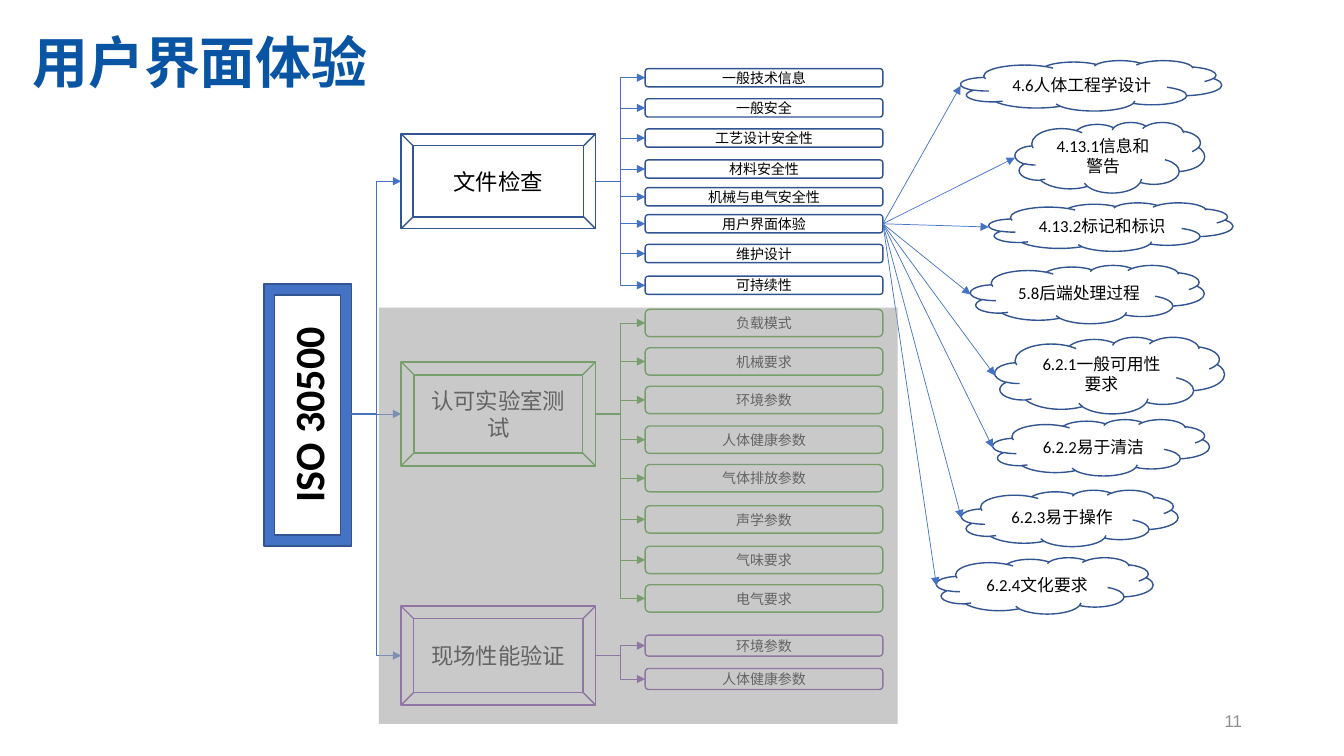
from dataclasses import dataclass

from lxml import etree
from pptx import Presentation
from pptx.dml.color import RGBColor
from pptx.enum.lang import MSO_LANGUAGE_ID as Language
from pptx.enum.shapes import MSO_CONNECTOR as Connector, MSO_SHAPE as Shape
from pptx.enum.text import MSO_ANCHOR as Anchor, MSO_AUTO_SIZE as AutoSize, PP_ALIGN as Align
from pptx.oxml.ns import qn
from pptx.util import Cm, Pt


@dataclass(frozen=True)
class Theme:
    title: str = "0A55A3"
    text: str = "000000"
    number: str = "8C8C8C"
    accent: str = "4472C4"
    blue: str = "325491"
    green: str = "36941C"
    purple: str = "7030A0"
    veil: str = "A5A5A5"
    title_size: int = 40
    root_size: int = 30
    group_size: int = 16
    note_size: int = 12
    leaf_size: int = 10
    outline: float = 1
    arrow: float = 0.5


theme = Theme()
deck = Presentation()
deck.slide_width, deck.slide_height = Cm(33.87), Cm(19.05)
page = deck.slides.add_slide(deck.slide_layouts[5])


def write(box, text, size, color=theme.text, align=Align.CENTER, name="Calibri", bold=False):
    frame = box.text_frame
    frame.text = text
    frame.word_wrap = True
    frame.vertical_anchor = Anchor.MIDDLE
    para = frame.paragraphs[0]
    para.alignment = align
    font = para.runs[0].font
    font.name, font.size, font.bold = name, Pt(size), bold
    font.color.rgb = RGBColor.from_string(color)
    font.language_id = Language.SIMPLIFIED_CHINESE


def arrow(kind, x1, y1, x2, y2, color=theme.accent):
    line = page.shapes.add_connector(kind, Cm(x1), Cm(y1), Cm(x2), Cm(y2))
    line.line.color.rgb = RGBColor.from_string(color)
    line.line.width = Pt(theme.arrow)
    etree.SubElement(line.line._get_or_add_ln(), qn("a:tailEnd"), type="triangle")
    etree.SubElement(line._element.spPr, qn("a:effectLst"))
    return line


# Title
title = page.shapes.title
title.left, title.top, title.width, title.height = Cm(0.81), Cm(0.38), Cm(31.09), Cm(2.51)
write(title, "用户界面体验", theme.title_size, theme.title, Align.LEFT, "Arial", True)
frame = title.text_frame
frame.auto_size = AutoSize.NONE
frame.margin_left = frame.margin_right = frame.margin_top = frame.margin_bottom = 0
frame.paragraphs[0].line_spacing = 0.9

# Root: the standard
root_right, root_middle = 8.85, 10.43
root = page.shapes.add_shape(Shape.FRAME, Cm(6.65), Cm(7.16), Cm(2.21), Cm(6.6))
root.shadow.inherit = False
root.fill.solid()
root.fill.fore_color.rgb = RGBColor.from_string(theme.accent)
root.line.color.rgb = RGBColor.from_string(theme.blue)
root.line.width = Pt(theme.outline)
write(root, "ISO 30500", theme.root_size, bold=True)
root.text_frame._txBody.bodyPr.set("vert", "vert270")

# Groups: label, middle, height, outline, arrow colour, leaf height, leaves with their middles
groups = [
    ("文件检查", 4.57, 2.39, theme.blue, theme.accent, 0.46, [
        ("一般技术信息", 1.96), ("一般安全", 2.72), ("工艺设计安全性", 3.48), ("材料安全性", 4.26),
        ("机械与电气安全性", 4.96), ("用户界面体验", 5.64), ("维护设计", 6.39), ("可持续性", 7.19)]),
    ("认可实验室测试", 10.43, 2.62, theme.green, theme.green, 0.69, [
        ("负载模式", 8.14), ("机械要求", 9.11), ("环境参数", 10.08), ("人体健康参数", 11.08),
        ("气体排放参数", 12.05), ("声学参数", 13.09), ("气味要求", 14.11), ("电气要求", 15.08)]),
    ("现场性能验证", 16.52, 2.49, theme.purple, theme.purple, 0.53, [
        ("环境参数", 16.27), ("人体健康参数", 17.11)]),
]
group_left, group_width = 10.11, 4.9
group_right = group_left + group_width
leaf_left, leaf_width = 16.26, 5.99

# Outlined shapes: preset, left, middle, width, height, outline, text, size
outlined = []
for label, middle, height, color, arrow_color, leaf_height, leaves in groups:
    outlined.append((Shape.BEVEL, group_left, middle, group_width, height,
                     color, label, theme.group_size))
    kind = Connector.STRAIGHT if middle == root_middle else Connector.ELBOW
    arrow(kind, root_right, root_middle, group_left, middle)
    for leaf, leaf_middle in leaves:
        outlined.append((Shape.ROUNDED_RECTANGLE, leaf_left, leaf_middle, leaf_width,
                         leaf_height, color, leaf, theme.leaf_size))
        arrow(Connector.ELBOW, group_right, middle, leaf_left, leaf_middle, arrow_color)

# Clauses: text, left, middle, width, height
clauses = [
    ("4.6人体工程学设计", 24.21, 2.16, 6.58, 1.27),
    ("4.13.1信息和警告", 25.58, 3.97, 4.78, 1.78),
    ("4.13.2标记和标识", 24.92, 5.72, 6.15, 1.22),
    ("5.8后端处理过程", 24.46, 7.42, 5.89, 1.47),
    ("6.2.1一般可用性要求", 25.07, 9.46, 5.79, 1.93),
    ("6.2.2易于清洁", 25.02, 11.28, 5.46, 1.42),
    ("6.2.3易于操作", 24.23, 13.06, 5.46, 1.42),
    ("6.2.4文化要求", 23.6, 14.76, 5.46, 1.42),
]
for clause, left, middle, width, height in clauses:
    outlined.append((Shape.CLOUD, left, middle, width, height,
                     theme.blue, clause, theme.note_size))

boxes = {}
for preset, left, middle, width, height, color, label, size in outlined:
    box = page.shapes.add_shape(preset, Cm(left), Cm(middle - height / 2), Cm(width), Cm(height))
    box.shadow.inherit = False
    box.fill.background()
    box.line.color.rgb = RGBColor.from_string(color)
    box.line.width = Pt(theme.outline)
    write(box, label, size)
    boxes[label] = box

# Arrows from the user interface leaf to its clauses
for clause, left, middle, width, height in clauses:
    link = arrow(Connector.STRAIGHT, leaf_left + leaf_width, 5.64, left, middle)
    link.begin_connect(boxes["用户界面体验"], 3)

# Page number
number = page.shapes.add_textbox(Cm(23.93), Cm(17.65), Cm(7.62), Cm(1.02))
write(number, "11", theme.note_size, theme.number, Align.RIGHT, "Arial")

# Veil over the groups not discussed here
veil = page.shapes.add_shape(Shape.RECTANGLE, Cm(9.55), Cm(7.75), Cm(13.07), Cm(10.49))
veil.shadow.inherit = False
veil.line.fill.background()
veil.fill.solid()
veil.fill.fore_color.rgb = RGBColor.from_string(theme.veil)
veil_color = veil._element.spPr.find(qn("a:solidFill"))[0]
etree.SubElement(veil_color, qn("a:alpha"), val="60000")

deck.save("out.pptx")
